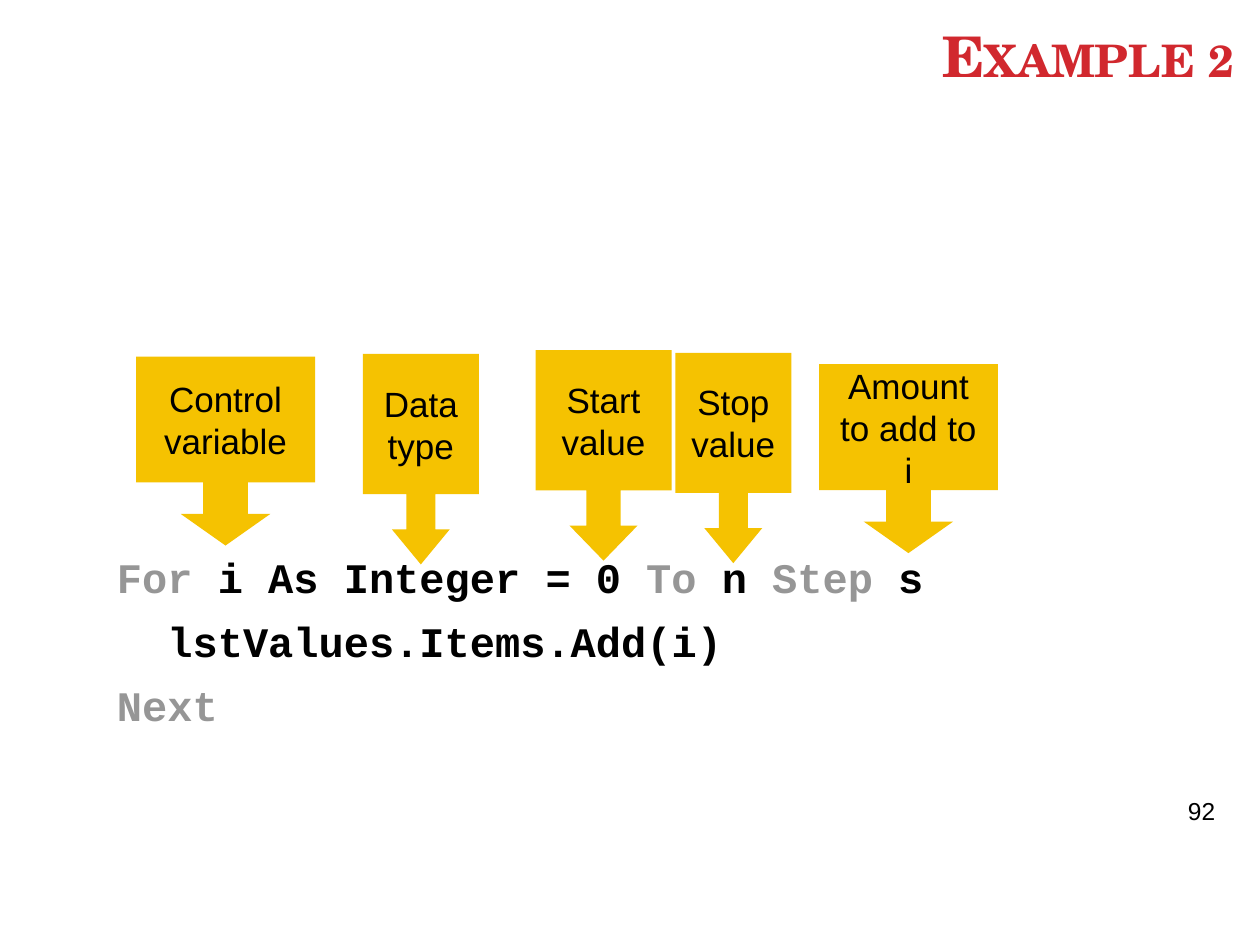
from pptx import Presentation
from pptx.dml.color import RGBColor
from pptx.enum.shapes import MSO_SHAPE
from pptx.enum.text import MSO_ANCHOR, PP_ALIGN
from pptx.util import Inches, Pt

CALLOUT = MSO_SHAPE.DOWN_ARROW_CALLOUT
TOP, MIDDLE, BOTTOM = MSO_ANCHOR.TOP, MSO_ANCHOR.MIDDLE, MSO_ANCHOR.BOTTOM
LEFT, CENTER, RIGHT = PP_ALIGN.LEFT, PP_ALIGN.CENTER, PP_ALIGN.RIGHT

THEME = {
    "ink": "000000", "title": "D1282E", "keyword": "969696", "callout": "F5C201",
    "title_font": "TeX Gyre Schola", "code_font": "Courier New", "label_font": "Arial",
    "title_size": 32, "code_size": 24, "label_size": 20, "number_size": 14,
}
WIDTH, HEIGHT = 10, 7.5
CODE_INDENT = 0.4
ARROW_SHARE, BOX_SHARE, SHAFT_SHARE = 1 / 6, 2 / 3, 0.25

TITLE = "Example 2"
PAGE_NUMBER = "92"
KEYWORDS = {"For", "To", "Step", "Next"}
CODE = [
    (0, ["For", " i As Integer = 0 ", "To", " n ", "Step", " s"]),
    (1, ["lstValues.Items.Add(i)"]),
    (0, ["Next"]),
]
CALLOUTS = [
    (["Control", "variable"], 1.08, 2.83, 1.42, 1.5),
    (["Data", "type"], 2.88, 2.81, 0.92, 1.67),
    (["Start", "value"], 4.25, 2.78, 1.08, 1.67),
    (["Stop", "value"], 5.36, 2.8, 0.92, 1.67),
    (["Amount", "to add to", "i"], 6.5, 2.89, 1.42, 1.5),
]


def write_text(shape, lines, *, font, size, color=THEME["ink"], bold=False, small_caps=False,
               align=LEFT, anchor=TOP, wrap=True, before=0, after=0):
    frame = shape.text_frame
    frame.word_wrap = wrap
    frame.vertical_anchor = anchor
    for index, (level, pieces) in enumerate(lines):
        paragraph = frame.paragraphs[0] if index == 0 else frame.add_paragraph()
        paragraph.alignment = align
        paragraph.space_before, paragraph.space_after = Pt(before), Pt(after)
        if level:
            paragraph._p.get_or_add_pPr().set("marL", str(Inches(level * CODE_INDENT)))
        for piece in pieces:
            run = paragraph.add_run()
            run.text = piece
            run.font.name, run.font.size, run.font.bold = font, Pt(size), bold
            shade = THEME["keyword"] if piece in KEYWORDS else color
            run.font.color.rgb = RGBColor.from_string(shade)
            if small_caps:
                run._r.get_or_add_rPr().set("cap", "small")


def add_text(slide, box, lines, **text_format):
    shape = slide.shapes.add_textbox(*map(Inches, box))
    write_text(shape, lines, **text_format)


def add_callout(slide, words, left, top, width, height):
    shape = slide.shapes.add_shape(CALLOUT, *map(Inches, (left, top, width, height)))
    shape.shadow.inherit = False
    shape.fill.solid()
    shape.fill.fore_color.rgb = RGBColor.from_string(THEME["callout"])
    shape.line.fill.background()
    head = height * ARROW_SHARE / min(width, height)
    for index, value in enumerate((SHAFT_SHARE, SHAFT_SHARE, head, BOX_SHARE)):
        shape.adjustments[index] = value
    write_text(shape, [(0, [word]) for word in words], font=THEME["label_font"],
               size=THEME["label_size"], align=CENTER, anchor=MIDDLE, wrap=False)


def main():
    presentation = Presentation()
    presentation.slide_width, presentation.slide_height = Inches(WIDTH), Inches(HEIGHT)
    slide = presentation.slides.add_slide(presentation.slide_layouts[6])
    add_text(slide, (0.17, 0.14, 9.72, 0.61), [(0, [TITLE])], font=THEME["title_font"],
             size=THEME["title_size"], color=THEME["title"], bold=True, small_caps=True,
             align=RIGHT, anchor=BOTTOM)
    add_text(slide, (0.83, 4.33, 7.95, 2.75), CODE, font=THEME["code_font"],
             size=THEME["code_size"], bold=True, before=6, after=1.7)
    add_text(slide, (9.33, 6.27, 0.67, 0.57), [(0, [PAGE_NUMBER])],
             font=THEME["label_font"], size=THEME["number_size"])
    for callout in CALLOUTS:
        add_callout(slide, *callout)
    presentation.save("out.pptx")


if __name__ == "__main__":
    main()
